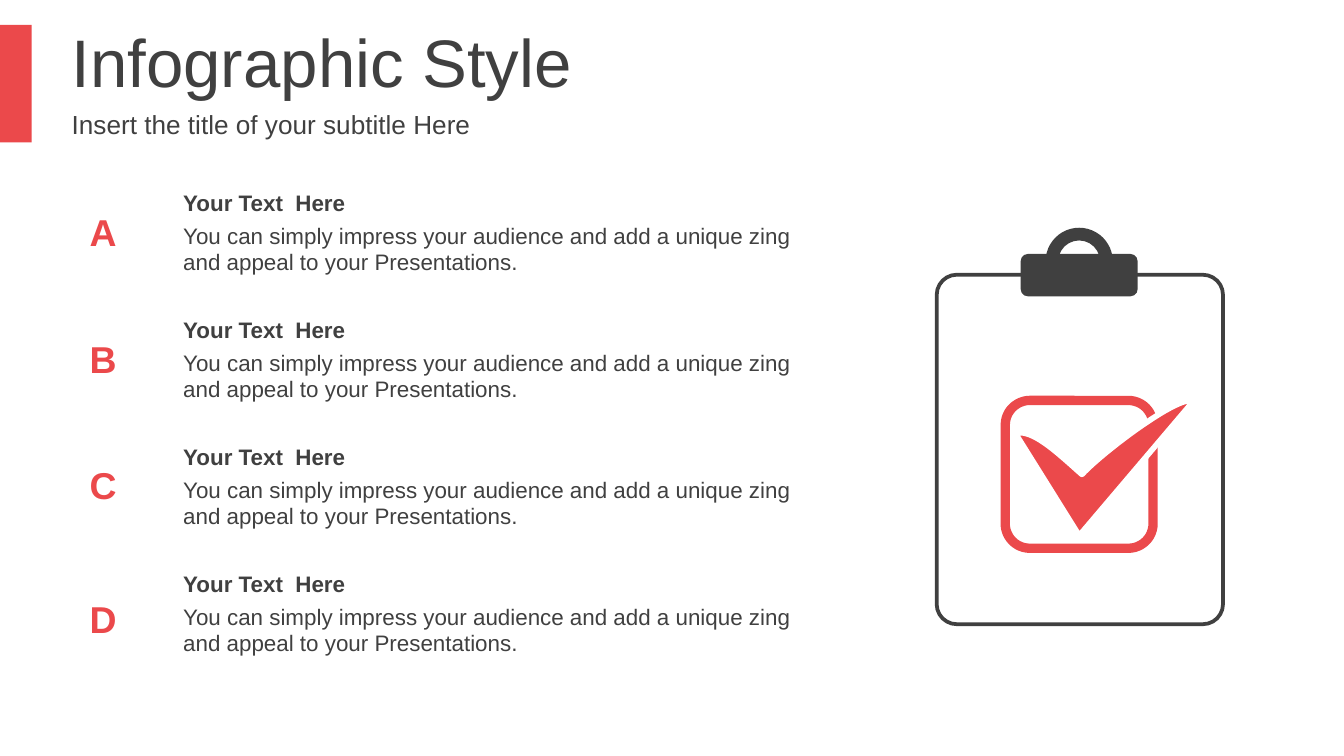
from dataclasses import dataclass

from pptx import Presentation
from pptx import util as u
from pptx.dml import color as c
from pptx.enum import shapes as s, text as t

PX = 4572
RED, DARK, WHITE = "EB494B", "404040", "FFFFFF"
HEAD = "Your Text  Here"
BODY = ("You can simply impress your audience and add a unique zing "
        "and appeal to your Presentations.")


@dataclass
class Box:
    left: int
    top: int
    width: int
    height: int

    def emu(self) -> list[int]:
        return [v * PX for v in (self.left, self.top, self.width, self.height)]


@dataclass
class Row:
    mark: str
    top: int


@dataclass
class Style:
    size: int
    color: str = DARK
    bold: bool = False
    center: bool = False
    middle: bool = True
    grow: bool = True


@dataclass
class Part:
    kind: s.MSO_SHAPE
    box: Box
    fill: str
    line: str = ""
    weight: int = 0
    adjust: tuple[float, ...] = ()


def rgb(code: str) -> c.RGBColor:
    return c.RGBColor.from_string(code)


def paint(shape, fill: str, line: str = "", weight: int = 0) -> None:
    shape.shadow.inherit = False
    shape.fill.solid()
    shape.fill.fore_color.rgb = rgb(fill)
    if line:
        shape.line.color.rgb = rgb(line)
        shape.line.width = u.Pt(weight)
    else:
        shape.line.fill.background()


def draw(slide, part: Part) -> None:
    shape = slide.shapes.add_shape(part.kind, *part.box.emu())
    for i, value in enumerate(part.adjust):
        shape.adjustments[i] = value
    paint(shape, part.fill, part.line, part.weight)


def write(slide, box: Box, words: str, style: Style) -> None:
    frame = slide.shapes.add_textbox(*box.emu()).text_frame
    frame.word_wrap = True
    if style.grow:
        frame.auto_size = t.MSO_AUTO_SIZE.SHAPE_TO_FIT_TEXT
    if style.middle:
        frame.vertical_anchor = t.MSO_ANCHOR.MIDDLE
    line = frame.paragraphs[0]
    line.text = words
    if style.center:
        line.alignment = t.PP_ALIGN.CENTER
    font = line.font
    font.name, font.size, font.bold = "Arial", u.Pt(style.size), style.bold
    font.color.rgb = rgb(style.color)


def curve(*ends: tuple[int, int], steps: int = 24) -> list[tuple[float, float]]:
    points = []
    for i in range(1, steps + 1):
        k = i / steps
        mix = ((1 - k) ** 3, 3 * k * (1 - k) ** 2, 3 * k * k * (1 - k), k ** 3)
        points.append(tuple(PX * sum(m * e[a] for m, e in zip(mix, ends))
                            for a in (0, 1)))
    return points


def tick(slide) -> None:
    notch, tip, foot, tail = (1610, 706), (1775, 598), (1606, 797), (1511, 645)
    pen = slide.shapes.build_freeform(notch[0] * PX, notch[1] * PX)
    pen.add_line_segments([
        *curve(notch, (1646, 668), (1760, 584), tip),
        (foot[0] * PX, foot[1] * PX),
        (tail[0] * PX, tail[1] * PX),
        *curve(tail, (1536, 637), (1576, 676), notch),
    ])
    paint(pen.convert_to_shape(), RED, WHITE, 3)


def main() -> None:
    deck = Presentation()
    deck.slide_width, deck.slide_height = 2000 * PX, 1125 * PX
    slide = deck.slides.add_slide(deck.slide_layouts[6])

    kind = s.MSO_SHAPE
    draw(slide, Part(kind.RECTANGLE, Box(0, 37, 47, 175), RED))
    write(slide, Box(87, 28, 1528, 126), "Infographic Style", Style(36, grow=False))
    write(slide, Box(87, 154, 1528, 62), "Insert the title of your subtitle Here",
          Style(14, grow=False))

    for part in (
        Part(kind.ROUNDED_RECTANGLE, Box(1394, 409, 426, 520), WHITE, DARK, 2, (0.07,)),
        Part(kind.ROUNDED_RECTANGLE, Box(1519, 378, 174, 63), DARK),
        Part(kind.BLOCK_ARC, Box(1556, 339, 100, 100), DARK, adjust=(108, 213.89, 0.19)),
        Part(kind.ROUNDED_RECTANGLE, Box(1496, 596, 220, 220), WHITE, RED, 5),
    ):
        draw(slide, part)
    tick(slide)

    rows = (Row("A", 302), Row("B", 490), Row("C", 678), Row("D", 878))
    for i, row in enumerate(rows):
        top = 272 + i * 189
        write(slide, Box(253, top + 48, 960, 100), BODY, Style(12))
        write(slide, Box(253, top, 960, 60), HEAD, Style(12, bold=True))
        write(slide, Box(97, row.top, 113, 88), row.mark,
              Style(20, RED, bold=True, center=True, middle=False))

    deck.save("out.pptx")


if __name__ == "__main__":
    main()
